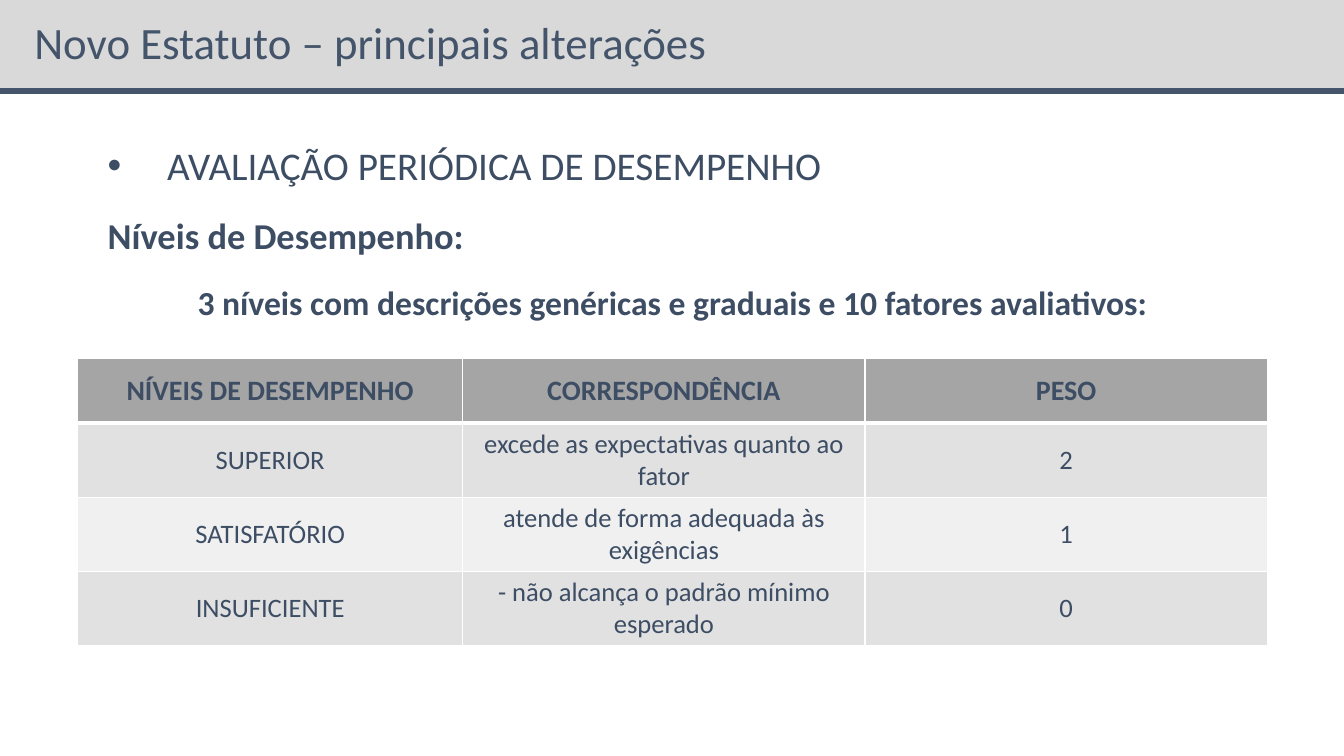
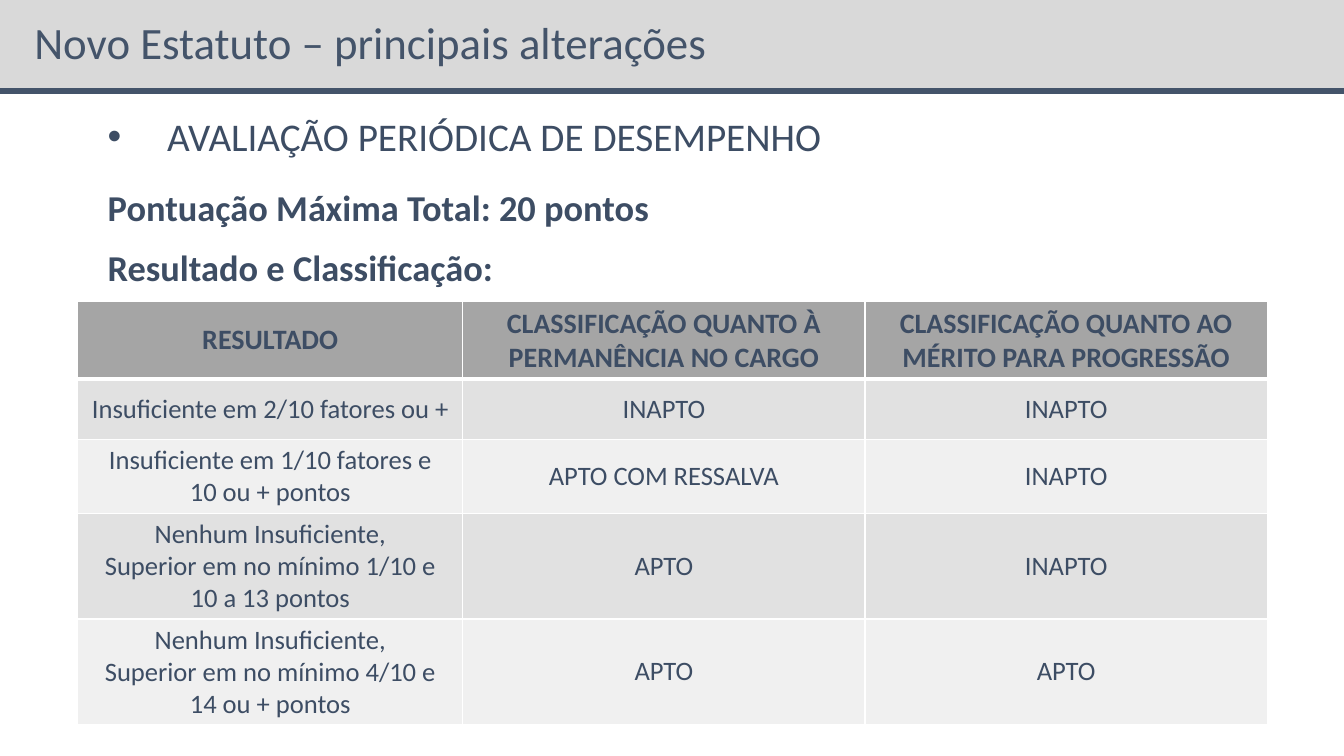
from dataclasses import dataclass

from lxml.etree import SubElement
from pptx import Presentation
from pptx.dml.color import RGBColor
from pptx.enum.shapes import MSO_CONNECTOR
from pptx.enum.text import MSO_ANCHOR, MSO_AUTO_SIZE, PP_ALIGN
from pptx.oxml.ns import qn
from pptx.slide import Slide
from pptx.table import _Cell
from pptx.text.text import _Paragraph
from pptx.util import Inches, Pt


@dataclass(frozen=True)
class Theme:
    font: str = "Calibri"
    title_color: str = "44546A"
    text_color: str = "3D4D64"
    band: str = "D9D9D9"
    header_fill: str = "A5A5A5"
    row_fills: tuple[str, str] = ("E1E1E1", "F0F0F0")
    border: str = "FFFFFF"
    title_size: int = 32
    topic_size: int = 28
    heading_size: int = 26
    lead_size: int = 24
    header_size: int = 20
    cell_size: int = 19


THEME = Theme()
SLIDE_WIDTH, SLIDE_HEIGHT = 13.33, 7.5
TITLE = "Novo Estatuto – principais alterações"
COLUMN_WIDTHS = (3.82, 3.99, 3.99)
HEADER_HEIGHT, ROW_HEIGHT = 0.64, 0.6


@dataclass(frozen=True)
class Line:
    text: str
    size: int
    bold: bool = True
    align: PP_ALIGN = PP_ALIGN.JUSTIFY
    space: int = 6
    bullet: bool = False


@dataclass(frozen=True)
class Page:
    body_top: float
    body_height: float
    lines: tuple[Line, ...]
    table_top: float
    rows: tuple[tuple[str, ...], ...]


TOPIC = Line("AVALIAÇÃO PERIÓDICA DE DESEMPENHO", THEME.topic_size,
             bold=False, space=12, bullet=True)

PAGES = (
    Page(
        1.35, 2.1,
        (
            TOPIC,
            Line("Níveis de Desempenho:", THEME.heading_size),
            Line("3 níveis com descrições genéricas e graduais e 10 fatores avaliativos:",
                 THEME.lead_size, align=PP_ALIGN.CENTER, space=12),
        ),
        3.56,
        (
            ("NÍVEIS DE DESEMPENHO", "CORRESPONDÊNCIA", "PESO"),
            ("SUPERIOR", "excede as expectativas quanto ao fator", "2"),
            ("SATISFATÓRIO", "atende de forma adequada às exigências", "1"),
            ("INSUFICIENTE", "- não alcança o padrão mínimo esperado", "0"),
        ),
    ),
    Page(
        1.07, 1.9,
        (
            TOPIC,
            Line("Pontuação Máxima Total: 20 pontos", THEME.heading_size),
            Line("Resultado e Classificação:", THEME.heading_size),
        ),
        2.99,
        (
            ("RESULTADO", "CLASSIFICAÇÃO QUANTO À PERMANÊNCIA NO CARGO",
             "CLASSIFICAÇÃO QUANTO AO MÉRITO PARA PROGRESSÃO"),
            ("Insuficiente em 2/10 fatores ou +", "INAPTO", "INAPTO"),
            ("Insuficiente em 1/10 fatores e\n10 ou + pontos",
             "APTO COM RESSALVA", "INAPTO"),
            ("Nenhum Insuficiente,\nSuperior em no mínimo 1/10 e\n10 a 13 pontos",
             "APTO", "INAPTO"),
            ("Nenhum Insuficiente,\nSuperior em no mínimo 4/10 e\n14 ou + pontos",
             "APTO", "APTO"),
        ),
    ),
)


def add_span(para: _Paragraph, text: str, size: int, bold: bool = False,
             color: str = THEME.text_color) -> None:
    span = para.add_run()
    span.text = text
    span.font.name = THEME.font
    span.font.size = Pt(size)
    span.font.bold = bold
    span.font.color.rgb = RGBColor.from_string(color)


def add_bullet(para: _Paragraph) -> None:
    properties = para._p.get_or_add_pPr()
    properties.set("marL", str(Inches(0.59)))
    properties.set("indent", str(-Inches(0.59)))
    SubElement(properties, qn("a:buFont")).set("typeface", "Arial")
    SubElement(properties, qn("a:buChar")).set("char", "•")


# Header band, drawn once and kept in the layout
def add_band_line(slide: Slide, y: float, color: str, width: float) -> None:
    line = slide.shapes.add_connector(
        MSO_CONNECTOR.STRAIGHT, Inches(0), Inches(y), Inches(SLIDE_WIDTH), Inches(y))
    line.line.color.rgb = RGBColor.from_string(color)
    line.line.width = Pt(width)
    SubElement(line.element.spPr, qn("a:effectLst"))
    slide.slide_layout.shapes.element.append(line.element)


def add_header_band(slide: Slide) -> None:
    add_band_line(slide, 0.43, THEME.band, 65)
    add_band_line(slide, 0.9, THEME.title_color, 4)


# Title and body text
def set_title(slide: Slide) -> None:
    title = slide.shapes.title
    title.left, title.top = Inches(0.24), Inches(0.15)
    title.width, title.height = Inches(11.5), Inches(0.6)
    frame = title.text_frame
    frame.auto_size = MSO_AUTO_SIZE.NONE
    frame.vertical_anchor = MSO_ANCHOR.MIDDLE
    para = frame.paragraphs[0]
    para.alignment = PP_ALIGN.LEFT
    para.line_spacing = 0.9
    add_span(para, TITLE, THEME.title_size, color=THEME.title_color)


def add_body(slide: Slide, page: Page) -> None:
    box = slide.shapes.add_textbox(
        Inches(0.97), Inches(page.body_top), Inches(11.4), Inches(page.body_height))
    frame = box.text_frame
    frame.word_wrap = True
    for index, line in enumerate(page.lines):
        para = frame.add_paragraph() if index else frame.paragraphs[0]
        if line.bullet:
            add_bullet(para)
        para.alignment = line.align
        para.space_before = Pt(line.space if index else 0)
        para.space_after = Pt(line.space)
        add_span(para, line.text, line.size, line.bold)


# Table
def set_borders(cell: _Cell, top: int, bottom: int) -> None:
    properties = cell._tc.get_or_add_tcPr()
    for side, width in (("L", 1), ("R", 1), ("T", top), ("B", bottom)):
        edge = SubElement(properties, qn(f"a:ln{side}"), w=str(Pt(width)))
        fill = SubElement(edge, qn("a:solidFill"))
        SubElement(fill, qn("a:srgbClr"), val=THEME.border)


def fill_cell(cell: _Cell, text: str, row: int) -> None:
    is_header = row == 0
    set_borders(cell, top=3 if row == 1 else 1, bottom=3 if is_header else 1)
    color = THEME.header_fill if is_header else THEME.row_fills[(row - 1) % 2]
    cell.fill.solid()
    cell.fill.fore_color.rgb = RGBColor.from_string(color)
    cell.vertical_anchor = MSO_ANCHOR.MIDDLE
    size = THEME.header_size if is_header else THEME.cell_size
    for index, part in enumerate(text.split("\n")):
        para = cell.text_frame.add_paragraph() if index else cell.text_frame.paragraphs[0]
        para.alignment = PP_ALIGN.CENTER
        add_span(para, part, size, bold=is_header)


def add_grid(slide: Slide, page: Page) -> None:
    height = HEADER_HEIGHT + ROW_HEIGHT * (len(page.rows) - 1)
    table = slide.shapes.add_table(
        len(page.rows), len(COLUMN_WIDTHS), Inches(0.77), Inches(page.table_top),
        Inches(sum(COLUMN_WIDTHS)), Inches(height)).table
    for column, width in zip(table.columns, COLUMN_WIDTHS):
        column.width = Inches(width)
    for row, texts in enumerate(page.rows):
        table.rows[row].height = Inches(ROW_HEIGHT if row else HEADER_HEIGHT)
        for column, text in enumerate(texts):
            fill_cell(table.cell(row, column), text, row)


def main() -> None:
    deck = Presentation()
    deck.slide_width, deck.slide_height = Inches(SLIDE_WIDTH), Inches(SLIDE_HEIGHT)
    title_only = deck.slide_layouts.get_by_name("Title Only")
    for index, page in enumerate(PAGES):
        slide = deck.slides.add_slide(title_only)
        if index == 0:
            add_header_band(slide)
        set_title(slide)
        add_body(slide, page)
        add_grid(slide, page)
    deck.save("out.pptx")


if __name__ == "__main__":
    main()
